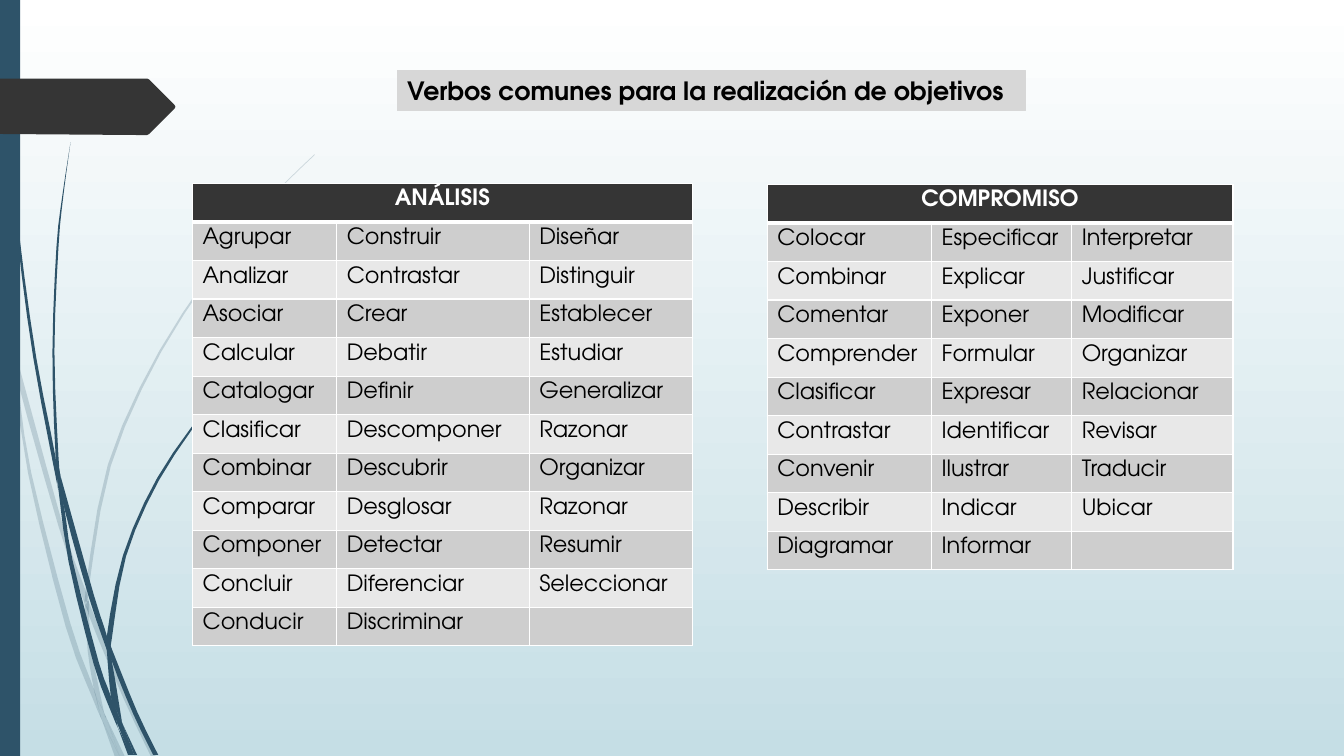
from lxml import etree
from pptx import Presentation
from pptx.dml.color import RGBColor
from pptx.enum.shapes import MSO_SHAPE
from pptx.enum.text import MSO_ANCHOR, PP_ALIGN
from pptx.oxml.ns import qn
from pptx.util import Inches, Pt

RECTANGLE = MSO_SHAPE.RECTANGLE
MIDDLE = MSO_ANCHOR.MIDDLE
LEFT, CENTER = PP_ALIGN.LEFT, PP_ALIGN.CENTER

THEME = {
    "font": "TeX Gyre Adventor",
    "title_size": 18, "verb_size": 16,
    "sky": ("FFFFFF", "C5DEE5"),
    "blade": "2E5369", "tag": "353535", "title_fill": "D7D7D7",
    "bands": ("CECECE", "E8E8E8"),
    "dark_text": "000000", "light_text": "FFFFFF", "grid": "FFFFFF",
}

TITLE = "Verbos comunes para la realización de objetivos"

VERB_GROUPS = [
    {"heading": "ANÁLISIS", "at": (1.91, 1.82), "columns": (1.43, 1.91, 1.62), "verbs": [
        ("Agrupar", "Construir", "Diseñar"),
        ("Analizar", "Contrastar", "Distinguir"),
        ("Asociar", "Crear", "Establecer"),
        ("Calcular", "Debatir", "Estudiar"),
        ("Catalogar", "Definir", "Generalizar"),
        ("Clasificar", "Descomponer", "Razonar"),
        ("Combinar", "Descubrir", "Organizar"),
        ("Comparar", "Desglosar", "Razonar"),
        ("Componer", "Detectar", "Resumir"),
        ("Concluir", "Diferenciar", "Seleccionar"),
        ("Conducir", "Discriminar", ""),
    ]},
    {"heading": "COMPROMISO", "at": (7.61, 1.83), "columns": (1.63, 1.39, 1.6), "verbs": [
        ("Colocar", "Especificar", "Interpretar"),
        ("Combinar", "Explicar", "Justificar"),
        ("Comentar", "Exponer", "Modificar"),
        ("Comprender", "Formular", "Organizar"),
        ("Clasificar", "Expresar", "Relacionar"),
        ("Contrastar", "Identificar", "Revisar"),
        ("Convenir", "Ilustrar", "Traducir"),
        ("Describir", "Indicar", "Ubicar"),
        ("Diagramar", "Informar", ""),
    ]},
]
ROW_HEIGHT = 0.3825

PALE_BLADES = [
    ([(0, 2.99), (.1, 3.44), (.11, 3.5)], [(0, 2.82), (.09, 3.22), (.11, 3.5)]),
    ([(.14, 3.45), (.17, 3.76), (.58, 5.22), (.84, 5.99)],
     [(.14, 3.45), (.62, 5.2), (.85, 5.86)]),
    ([(.88, 5.96), (.88, 6.1), (1.23, 6.94), (1.5, 7.51)],
     [(.88, 5.96), (.92, 6.07), (1.27, 6.92), (1.55, 7.51)]),
    ([(1.05, 7.11), (1.19, 7.51)], [(1.05, 7.11), (1.24, 7.51)]),
    ([(.11, 3.5), (.28, 4.7), (.65, 6.21), (.92, 6.93), (1.01, 7.14)],
     [(.11, 3.5), (.17, 3.76), (.31, 4.69), (.7, 6.19), (.93, 6.83), (.99, 7.07), (1.01, 7.14)]),
    ([(.84, 5.99), (.87, 6.46), (.93, 6.83), (.96, 6.92), (1.05, 7.11)],
     [(.84, 5.99), (.88, 6.08), (.91, 6.46), (1.03, 7.06), (1.05, 7.11)]),
    ([(3.12, 1.53), (2.89, 1.75), (2.68, 1.97), (2.28, 2.44), (1.58, 3.48), (1.07, 4.61),
      (.85, 5.84), (.88, 5.96)],
     [(3.12, 1.54), (2.9, 1.75), (2.68, 1.98), (2.29, 2.45), (1.6, 3.49), (1.1, 4.62),
      (.88, 5.84), (.88, 5.96)]),
    ([(1.01, 7.14), (1.14, 7.51)], [(1.01, 7.14), (1.19, 7.51)]),
    ([(.85, 5.86), (.84, 5.99), (.88, 6.08)], [(.85, 5.86), (.88, 5.96), (.88, 6.1)]),
    ([(.93, 6.83), (.99, 7.07), (1.01, 7.14), (1.19, 7.51)],
     [(.93, 6.83), (.96, 6.92), (1.05, 7.11), (1.19, 7.51)]),
]
DARK_BLADES = [
    ([(.03, 0), (.04, .48), (.07, 1.1), (.17, 2.33), (.33, 3.55), (.56, 4.77), (.57, 4.81)],
     [(.04, 0), (.05, .48), (.08, 1.09), (.19, 2.32), (.36, 3.55), (.55, 4.53), (.57, 4.81)]),
    ([(.6, 4.72), (.64, 5.05), (.88, 5.92), (1.06, 6.45)],
     [(.6, 4.72), (.93, 5.9), (1.06, 6.31), (1.06, 6.45)]),
    ([(1.1, 6.41), (1.11, 6.56), (1.32, 7.08), (1.52, 7.49)],
     [(1.1, 6.41), (1.13, 6.49), (1.36, 7.06), (1.57, 7.49)]),
    ([(.57, 4.77), (.68, 5.57), (.93, 6.59), (1.11, 7.08), (1.17, 7.22)],
     [(.57, 4.77), (.64, 5.05), (.72, 5.56), (.98, 6.57), (1.1, 6.91), (1.17, 7.22)]),
    ([(.7, 1.41), (.62, 1.93), (.56, 2.45), (.52, 3.49), (.55, 4.49), (.6, 4.72)],
     [(.7, 1.41), (.63, 1.93), (.58, 2.45), (.54, 3.49), (.58, 4.53), (.6, 4.72)]),
    ([(1.22, 7.19), (1.33, 7.49)], [(1.22, 7.19), (1.36, 7.49)]),
    ([(.55, 4.49), (.57, 4.77), (.64, 5.05)], [(.55, 4.49), (.6, 4.72), (.64, 5.05)]),
    ([(2.6, 3.44), (2.45, 3.58), (2.31, 3.73), (2.04, 4.05), (1.56, 4.74), (1.22, 5.51),
      (1.06, 6.31), (1.1, 6.41)],
     [(2.61, 3.44), (2.45, 3.59), (2.31, 3.74), (2.05, 4.06), (1.58, 4.76), (1.25, 5.52),
      (1.11, 6.33), (1.1, 6.41)]),
    ([(1.17, 7.22), (1.27, 7.49)], [(1.17, 7.22), (1.31, 7.49)]),
    ([(1.06, 6.45), (1.1, 6.91), (1.16, 7.06), (1.22, 7.19)],
     [(1.06, 6.45), (1.11, 6.56), (1.21, 7.16), (1.22, 7.19)]),
    ([(1.06, 6.31), (1.06, 6.45), (1.11, 6.56)], [(1.06, 6.31), (1.1, 6.41), (1.11, 6.56)]),
    ([(1.1, 6.91), (1.16, 7.17), (1.3, 7.49)],
     [(1.1, 6.91), (1.16, 7.06), (1.22, 7.19), (1.33, 7.49)]),
]
TAG = [(0, .78), (1.46, .78), (1.48, .79), (1.73, 1.04), (1.74, 1.06), (1.73, 1.08),
       (1.48, 1.33), (1.46, 1.34), (1.36, 1.34), (0, 1.33)]
STEPS = 3


def color(key):
    return RGBColor.from_string(THEME.get(key, key))


def paint(shape, fill, opacity=100):
    shape.shadow.inherit = False
    shape.fill.solid()
    shape.fill.fore_color.rgb = color(fill)
    shape.line.fill.background()
    if opacity < 100:
        tint = shape.fill._xPr.find(".//" + qn("a:srgbClr"))
        etree.SubElement(tint, qn("a:alpha"), val=str(opacity * 1000))


def smooth(edge):
    padded = [edge[0], *edge, edge[-1]]
    curve = []
    for a, b, c, d in zip(padded, padded[1:], padded[2:], padded[3:]):
        for step in range(STEPS):
            t = step / STEPS
            curve.append(tuple(
                q + t * (r - p) / 2 + t * t * (2 * p - 5 * q + 4 * r - s) / 2
                + t ** 3 * (3 * q - p - 3 * r + s) / 2
                for p, q, r, s in zip(a, b, c, d)))
    return curve + [edge[-1]]


def draw_outline(slide, points, fill, opacity=100):
    corners = [(Inches(x), Inches(y)) for x, y in points]
    builder = slide.shapes.build_freeform(*corners[0])
    builder.add_line_segments(corners[1:], close=True)
    paint(builder.convert_to_shape(), fill, opacity)


def write(frame, text, size, text_color, bold=False, align=LEFT):
    paragraph = frame.paragraphs[0]
    paragraph.text = text
    paragraph.alignment = align
    font = paragraph.font
    font.name, font.size, font.bold = THEME["font"], Pt(THEME[size]), bold
    font.color.rgb = color(text_color)


def fill_cell(cell, text, fill, text_color, heading=False):
    cell.margin_top, cell.margin_bottom = Inches(0.06), 0
    write(cell.text_frame, text, "verb_size", text_color, heading, CENTER if heading else LEFT)
    properties = cell._tc.get_or_add_tcPr()
    for side in ("lnL", "lnR", "lnT", "lnB"):
        width = 3 if heading and side == "lnB" else 1
        border = etree.SubElement(properties, qn("a:" + side), w=str(Pt(width)))
        solid = etree.SubElement(border, qn("a:solidFill"))
        etree.SubElement(solid, qn("a:srgbClr"), val=THEME["grid"])
    cell.fill.solid()
    cell.fill.fore_color.rgb = color(fill)


def add_verbs(slide, group):
    columns, verbs = group["columns"], group["verbs"]
    rows = len(verbs) + 1
    left, top = group["at"]
    table = slide.shapes.add_table(
        rows, len(columns), Inches(left), Inches(top),
        Inches(sum(columns)), Inches(rows * ROW_HEIGHT)).table
    for column, width in zip(table.columns, columns):
        column.width = Inches(width)
    for index in range(len(columns)):
        fill_cell(table.cell(0, index), group["heading"] if index == 0 else "",
                  "tag", "light_text", True)
    table.cell(0, 0).merge(table.cell(0, len(columns) - 1))
    for row, line in enumerate(verbs):
        for index, verb in enumerate(line):
            fill_cell(table.cell(row + 1, index), verb, THEME["bands"][row % 2], "dark_text")


def main():
    deck = Presentation()
    deck.slide_width, deck.slide_height = Inches(13.33), Inches(7.5)
    slide = deck.slides.add_slide(deck.slide_layouts[6])
    sky = slide.background.fill
    sky.gradient()
    sky.gradient_angle = 270
    for stop, shade in zip(sky.gradient_stops, THEME["sky"]):
        stop.color.rgb = color(shade)

    for blades, opacity in ((PALE_BLADES, 20), (DARK_BLADES, 100)):
        for near, far in blades:
            draw_outline(slide, smooth(near) + smooth(far)[::-1], "blade", opacity)
    side_bar = slide.shapes.add_shape(RECTANGLE, 0, 0, Inches(0.2), deck.slide_height)
    paint(side_bar, "blade")
    draw_outline(slide, TAG, "tag")

    title = slide.shapes.add_shape(
        RECTANGLE, Inches(3.94), Inches(0.7), Inches(6.23), Inches(0.4))
    paint(title, "title_fill")
    title.line.color.rgb = color("title_fill")
    title.line.width = Pt(0.75)
    title.text_frame.word_wrap = True
    title.text_frame.vertical_anchor = MIDDLE
    write(title.text_frame, TITLE, "title_size", "dark_text", True)

    for group in VERB_GROUPS:
        add_verbs(slide, group)
    deck.save("out.pptx")


if __name__ == "__main__":
    main()
